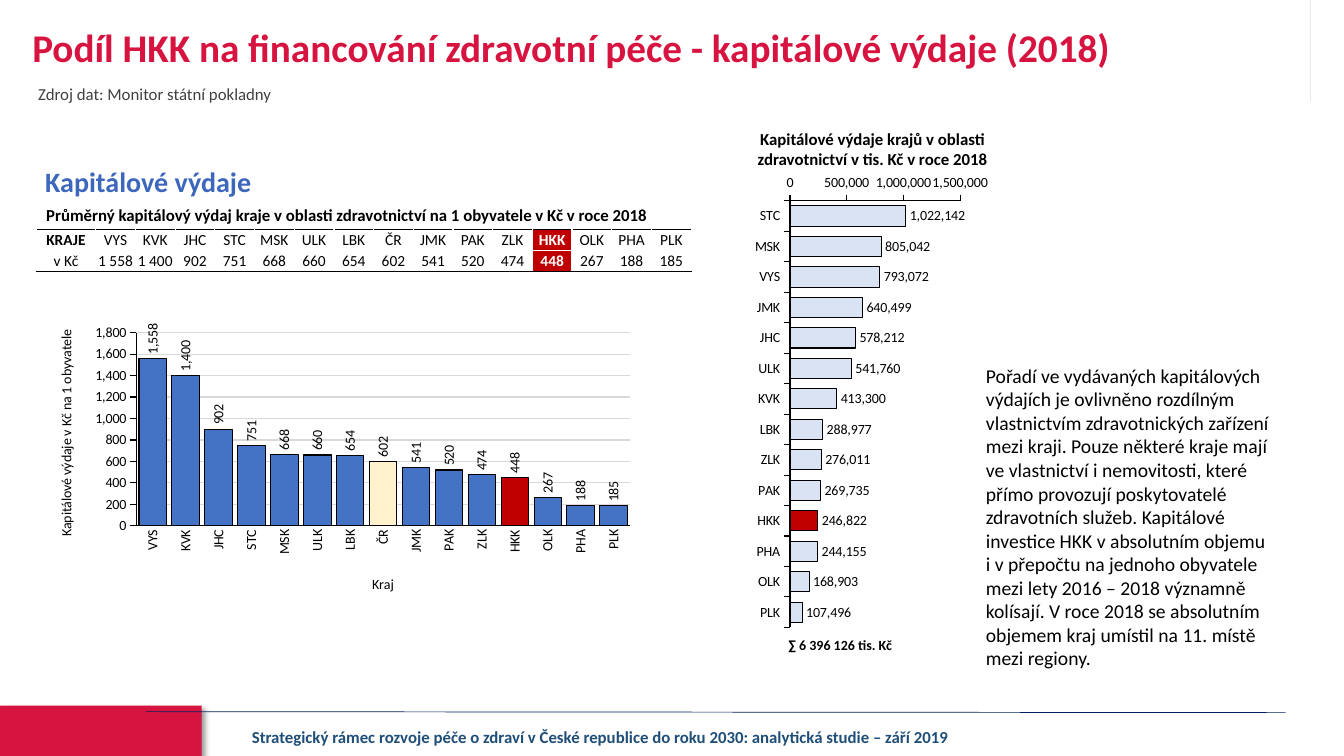
from dataclasses import dataclass
from pptx import Presentation
from pptx import util as u
from pptx.chart import data as cd
from pptx.dml import color as col
from pptx.enum import chart as ch
from pptx.enum import shapes as sh
from pptx.enum import text as tx
from pptx.oxml import parse_xml
from pptx.oxml import ns


@dataclass(frozen=True)
class Theme:
    """Hold the colours, font and type sizes of the slide."""
    font: str = "Calibri"
    black: str = "000000"
    white: str = "FFFFFF"
    crimson: str = "D71440"
    navy: str = "2E5980"
    rule: str = "002060"
    foot: str = "1F4E79"
    grey: str = "404040"
    grid: str = "D9D9D9"
    head: str = "3D67BC"
    blue: str = "4472C4"
    pale: str = "DAE3F3"
    cream: str = "FFF2CC"
    red: str = "C00000"
    title: int = 28
    sub: int = 20
    body: int = 14
    note: int = 12
    cell: int = 11
    small: int = 10
    thin: float = 0.75


T = Theme()
WIDE, HIGH = 13.33, 7.5
UP = "-5400000"
SPEND = dict(VYS=1558, KVK=1400, JHC=902, STC=751, MSK=668, ULK=660, LBK=654, ČR=602,
             JMK=541, PAK=520, ZLK=474, HKK=448, OLK=267, PHA=188, PLK=185)
TOTAL = dict(STC=1022142, MSK=805042, VYS=793072, JMK=640499, JHC=578212, ULK=541760,
             KVK=413300, LBK=288977, ZLK=276011, PAK=269735, HKK=246822, PHA=244155,
             OLK=168903, PLK=107496)
BODY = ("Pořadí ve vydávaných kapitálových výdajích je ovlivněno rozdílným vlastnictvím "
        "zdravotnických zařízení mezi kraji. Pouze některé kraje mají ve vlastnictví i "
        "nemovitosti, které přímo provozují poskytovatelé zdravotních služeb. Kapitálové "
        "investice HKK v absolutním objemu i v přepočtu na jednoho obyvatele mezi lety "
        "2016 – 2018 významně kolísají. V roce 2018 se absolutním objemem kraj umístil na "
        "11. místě mezi regiony.")


def rgb(hue):
    """Turn a hex string into a colour."""
    return col.RGBColor.from_string(hue)


def inch(box):
    """Turn a box of numbers into lengths."""
    return [u.Inches(n) for n in box]


def style(font, size, hue=T.black, bold=False):
    """Format a font."""
    font.name, font.size, font.bold = T.font, u.Pt(size), bold
    font.color.rgb = rgb(hue)


def write(frame, words, size=T.note, hue=T.black, bold=False, align="LEFT", wrap=True):
    """Put formatted text into a text frame."""
    frame.word_wrap = wrap
    para = frame.paragraphs[0]
    para.alignment = getattr(tx.PP_ALIGN, align)
    run = para.add_run()
    run.text = words
    style(run.font, size, hue, bold)


def label(slide, box, words, **form):
    """Add a text box."""
    write(slide.shapes.add_textbox(*inch(box)).text_frame, words, **form)


def head(slide, box, words):
    """Place and format the title."""
    title = slide.shapes.title
    title.left, title.top, title.width, title.height = inch(box)
    title.text_frame.vertical_anchor = tx.MSO_ANCHOR.TOP
    write(title.text_frame, words, size=T.title, hue=T.crimson, bold=True)
    title.text_frame.paragraphs[0].line_spacing = 0.9


def corner(slide, ends, pulls, tip, hue):
    """Draw a curved corner with a soft shadow."""
    knots = (ends[0], *pulls, ends[1])
    dots = []
    for step in range(41):
        t = step / 40
        mix = ((1 - t) ** 3, 3 * t * (1 - t) ** 2, 3 * t * t * (1 - t), t ** 3)
        dots.append(tuple(sum(m * k[i] for m, k in zip(mix, knots)) for i in (0, 1)))
    pen = slide.shapes.build_freeform(*dots[0], scale=u.Inches(1))
    pen.add_line_segments(dots[1:] + [tip], close=True)
    shape = pen.convert_to_shape()
    shape.fill.solid()
    shape.fill.fore_color.rgb = rgb(hue)
    shape.line.fill.background()
    shape.element.spPr.append(parse_xml(
        f'<a:effectLst {ns.nsdecls("a")}><a:outerShdw blurRad="50800" dist="38100" dir="2700000">'
        f'<a:srgbClr val="{T.black}"><a:alpha val="40000"/></a:srgbClr>'
        '</a:outerShdw></a:effectLst>'))


def frame(slide):
    """Draw the corners, the rule and the footer."""
    corner(slide, ((2.13, HIGH), (0, 6.3)), ((-0.34, 7.44), (0.08, 7.59)), (0, HIGH), T.crimson)
    corner(slide, ((11.11, 0), (WIDE, 1.42)), ((13.7, 0.07), (13.26, -0.1)), (WIDE, 0), T.navy)
    line = slide.shapes.add_connector(sh.MSO_CONNECTOR.STRAIGHT, *inch((1.45, 7.06, 12.75, 7.07)))
    line.line.color.rgb = rgb(T.rule)
    line.line.width = u.Pt(0.5)
    line.element.spPr.append(parse_xml(f'<a:effectLst {ns.nsdecls("a")}/>'))
    label(slide, (1.91, 7.16, 8.09, 0.3),
          "Strategický rámec rozvoje péče o zdraví v České republice do roku 2030: "
          "analytická studie – září 2019", hue=T.foot, bold=True, align="CENTER")


def grid(slide, box, data):
    """Build the table of spending per head."""
    table = slide.shapes.add_table(2, len(data) + 1, *inch(box)).table
    table.first_row = table.horz_banding = False
    first = 0.59
    for i, band in enumerate(table.columns):
        band.width = u.Inches((box[2] - first) / len(data) if i else first)
    for row in table.rows:
        row.height = u.Inches(box[3] / 2)
    rows = (["KRAJE", *data], ["v Kč", *(f"{n:,}".replace(",", " ") for n in data.values())])
    for r, row in enumerate(rows):
        for c, words in enumerate(row):
            cell, mark = table.cell(r, c), rows[0][c] == "HKK"
            cell.margin_left = cell.margin_right = cell.margin_top = u.Inches(0.01)
            cell.margin_bottom = 0
            cell.vertical_anchor = tx.MSO_ANCHOR.MIDDLE
            cell.fill.solid()
            cell.fill.fore_color.rgb = rgb(T.red if mark else T.white)
            write(cell.text_frame, words, size=T.cell, hue=T.white if mark else T.black,
                  bold=mark or words == "KRAJE", align="CENTER")
            side = "lnB" if r else "lnT"
            cell.fill._xPr.insert(0, parse_xml(
                f'<a:{side} {ns.nsdecls("a")} w="9525"><a:solidFill><a:srgbClr val="{T.black}"/>'
                f'</a:solidFill></a:{side}>'))


def place(node, spot, order, inner=False):
    """Fix the place of a chart part by fractions of the chart."""
    for old in node.xpath("c:layout"):
        node.remove(old)
    tags = {"xMode": "edge", "yMode": "edge", **dict(zip("xywh", spot))}
    if inner:
        tags = {"layoutTarget": "inner", **tags}
    parts = "".join(f'<c:{k} val="{v}"/>' for k, v in tags.items())
    node.insert(order, parse_xml(f'<c:layout {ns.nsdecls("c")}><c:manualLayout>{parts}'
                                 '</c:manualLayout></c:layout>'))


def name(axis, words, spot):
    """Give an axis its title."""
    write(axis.axis_title.text_frame, words, size=T.small)
    place(axis.axis_title.element, spot, 1)


def plot(slide, box, kind, data, hue, marks, gap, top, unit, spot):
    """Build a bar chart with labels and marked bars."""
    pack = cd.CategoryChartData()
    pack.categories = list(data)
    pack.add_series("Series 1", list(data.values()))
    chart = slide.shapes.add_chart(getattr(ch.XL_CHART_TYPE, kind), *inch(box), pack).chart
    chart.has_legend = chart.has_title = False
    style(chart.font, T.small)
    bars, row = chart.plots[0], chart.plots[0].series[0]
    bars.gap_width, bars.vary_by_categories = gap, False
    row.invert_if_negative = False
    for part, tone in [(row, hue)] + [(row.points[list(data).index(k)], v) for k, v in marks.items()]:
        part.format.fill.solid()
        part.format.fill.fore_color.rgb = rgb(tone)
        part.format.line.color.rgb = rgb(T.black)
        part.format.line.width = u.Pt(T.thin)
    tags = row.data_labels
    tags.show_value, tags.position = True, ch.XL_LABEL_POSITION.OUTSIDE_END
    tags.number_format, tags.number_format_is_linked = "#,##0", False
    style(tags.font, T.small)
    for axis in (chart.category_axis, chart.value_axis):
        axis.has_major_gridlines = False
        axis.major_tick_mark = ch.XL_TICK_MARK.OUTSIDE
        axis.format.line.color.rgb = rgb(T.black)
        axis.format.line.width = u.Pt(T.thin)
        style(axis.tick_labels.font, T.small)
    axis.minimum_scale, axis.maximum_scale, axis.major_unit = 0, top, unit
    axis.tick_labels.number_format, axis.tick_labels.number_format_is_linked = "#,##0", False
    place(chart.element.xpath(".//c:plotArea")[0], spot, 0, True)
    return chart


def left(slide):
    """Fill the region of spending per head."""
    label(slide, (0.35, 1.58, 4.95, 0.35), "Kapitálové výdaje", size=T.sub, hue=T.head, bold=True)
    label(slide, (0.36, 1.98, 6.44, 0.3), "Průměrný kapitálový výdaj kraje v oblasti "
          "zdravotnictví na 1 obyvatele v Kč v roce 2018", bold=True)
    grid(slide, (0.36, 2.28, 6.5, 0.41), SPEND)
    chart = plot(slide, (0.36, 3.16, 6.01, 2.8), "COLUMN_CLUSTERED", SPEND, T.blue,
                 dict(ČR=T.cream, HKK=T.red), 20, 1800, 200, (0.165, 0.05, 0.815, 0.685))
    cat, val = chart.category_axis, chart.value_axis
    cat.major_tick_mark = ch.XL_TICK_MARK.NONE
    val.has_major_gridlines = True
    val.major_gridlines.format.line.color.rgb = rgb(T.grid)
    val.major_gridlines.format.line.width = u.Pt(T.thin)
    name(cat, "Kraj", (0.55, 0.9))
    name(val, "Kapitálové výdaje v Kč na 1 obyvatele", (0.03, 0.03))
    for body in chart.element.xpath(".//c:catAx/c:txPr/a:bodyPr | .//c:dLbls/c:txPr/a:bodyPr"
                                    " | .//c:valAx/c:title//a:bodyPr"):
        body.set("rot", UP)
        body.set("vert", "horz")


def right(slide):
    """Fill the region of total spending and its comment."""
    chart = plot(slide, (7.45, 1.64, 2.41, 4.68), "BAR_CLUSTERED", TOTAL, T.pale,
                 dict(HKK=T.red), 50, 1500000, 500000, (0.16, 0.075, 0.7, 0.905))
    chart.plots[0].overlap = 100
    chart.category_axis.reverse_order = True
    label(slide, (7.34, 1.23, 2.63, 0.5), "Kapitálové výdaje krajů v oblasti zdravotnictví "
          "v tis. Kč v roce 2018", bold=True, align="CENTER")
    label(slide, (7.72, 6.27, 1.28, 0.27), "∑ 6 396 126 tis. Kč", size=T.small, bold=True)
    label(slide, (9.68, 3.56, 3.05, 3.16), BODY, size=T.body)


def main():
    """Build and save the slide."""
    deck = Presentation()
    deck.slide_width, deck.slide_height = inch((WIDE, HIGH))
    slide = deck.slides.add_slide(deck.slide_layouts[5])
    frame(slide)
    head(slide, (0.22, 0.23, 11.5, 0.69),
         "Podíl HKK na financování zdravotní péče - kapitálové výdaje (2018)")
    label(slide, (0.28, 0.78, 2.54, 0.3), "Zdroj dat: Monitor státní pokladny", hue=T.grey, wrap=False)
    left(slide)
    right(slide)
    deck.save("out.pptx")


if __name__ == "__main__":
    main()
